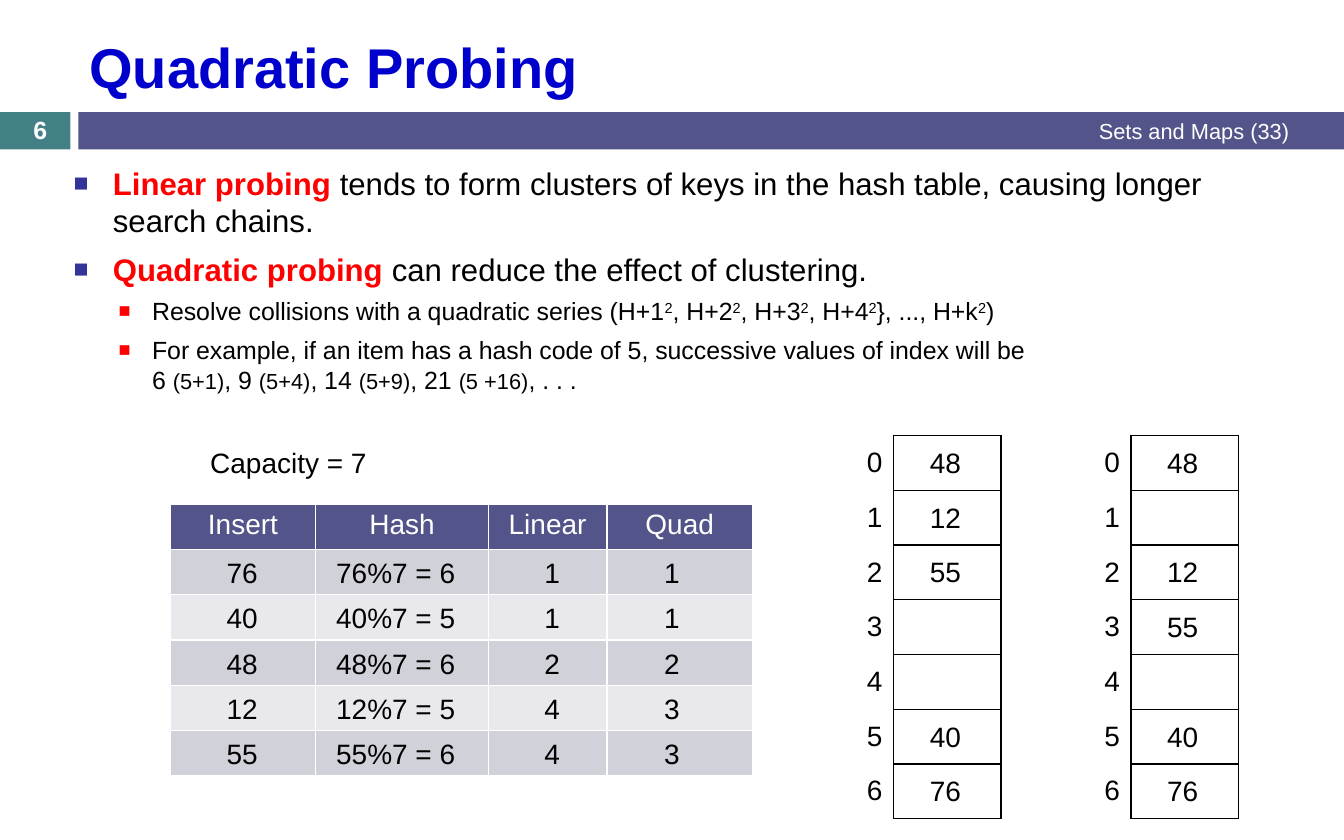
from lxml.etree import SubElement
from pptx import Presentation
from pptx.dml.color import RGBColor
from pptx.enum.shapes import MSO_SHAPE as Shape
from pptx.enum.text import MSO_ANCHOR as Anchor, PP_ALIGN as Align
from pptx.oxml.ns import qn
from pptx.util import Pt

WHITE = RGBColor(0xFF, 0xFF, 0xFF)
BLACK = RGBColor(0, 0, 0)
BLUE = RGBColor(0, 0, 0xCC)
NAVY = RGBColor(0x33, 0x33, 0x99)
RED = RGBColor(0xFF, 0, 0)
TEAL = RGBColor(0x43, 0x80, 0x86)
INDIGO = RGBColor(0x53, 0x54, 0x8A)
DARK = RGBColor(0xD1, 0xD1, 0xDA)
LIGHT = RGBColor(0xE9, 0xE9, 0xED)

POINTS = [
    (0, [("Linear probing ", "key"),
         ("tends to form clusters of keys in the hash table, "
          "causing longer search chains.", "")]),
    (0, [("Quadratic probing ", "key"),
         ("can reduce the effect of clustering.", "")]),
    (1, [("Resolve collisions with a quadratic series (H+1", ""), ("2", "sup"),
         (", H+2", ""), ("2", "sup"), (", H+3", ""), ("2", "sup"),
         (", H+4", ""), ("2", "sup"), ("}, ..., H+k", ""), ("2", "sup"),
         (")", "")]),
    (1, [("For example, if an item has a hash code of 5, "
          "successive values of index will be ", ""), ("\n", "break"),
         ("6 ", ""), ("(5+1)", "small"), (", 9 ", ""), ("(5+4)", "small"),
         (", 14 ", ""), ("(5+9)", "small"), (", 21 ", ""),
         ("(5 +16)", "small"), (", . . .", "")]),
]
# Per level: size, left margin, hanging indent, space before, bullet colour
LEVELS = [(20, 25.2, 25.2, 7, NAVY), (16, 50.4, 21.6, 5.5, RED)]

HEADS = ["Insert", "Hash", "Linear", "Quad"]
WIDTHS = [93.6, 110.9, 76.3, 93.6]
INSERTS = [
    ("76", "76%7 = 6", "1", "1"),
    ("40", "40%7 = 5", "1", "1"),
    ("48", "48%7 = 6", "2", "2"),
    ("12", "12%7 = 5", "4", "3"),
    ("55", "55%7 = 6", "4", "3"),
]
# Left and width of the value boxes in each column, from the table's left
VALUES = [(11, 70.6), (93, 104), (216.7, 57.6), (293.8, 57.6)]
LINEAR = ["48", "12", "55", "", "", "40", "76"]
QUAD = ["48", "", "12", "55", "", "40", "76"]


def style(run, size, color, bold=False):
    font = run.font
    font.name, font.size, font.bold = "Arial", Pt(size), bold
    font.color.rgb = color


def label(slide, box, text, size=18, color=BLACK, bold=False,
          align=Align.CENTER, anchor=Anchor.TOP):
    frame = slide.shapes.add_textbox(*map(Pt, box)).text_frame
    frame.word_wrap = True
    frame.vertical_anchor = anchor
    frame.text = text
    para = frame.paragraphs[0]
    para.alignment = align
    style(para.runs[0], size, color, bold)


def bar(slide, box, color):
    rect = slide.shapes.add_shape(Shape.RECTANGLE, *map(Pt, box))
    rect.shadow.inherit = False
    rect.fill.solid()
    rect.fill.fore_color.rgb = color
    rect.line.fill.background()


def header(slide, left, top, width, height):
    bar(slide, (left, top, 45.2, height), TEAL)
    bar(slide, (left + 50.4, top, width - 50.4, height), INDIGO)
    label(slide, (left + 50.4, top - 58.3, 785.5, 57.6), "Quadratic Probing",
          36, BLUE, True, Align.LEFT, Anchor.MIDDLE)
    label(slide, (left + 324, top - 0.5, 512, 25), "Sets and Maps (33)",
          14, WHITE, align=Align.RIGHT, anchor=Anchor.MIDDLE)
    label(slide, (left, top + 0.7, 51.8, 21.6), "6", 16, WHITE, True,
          anchor=Anchor.MIDDLE)


def bullet(para, margin, hang, color):
    props = para._p.get_or_add_pPr()
    props.set("marL", str(Pt(margin)))
    props.set("indent", str(-Pt(hang)))
    tint = SubElement(props, qn("a:buClr"))
    SubElement(tint, qn("a:srgbClr"), val=str(color))
    SubElement(props, qn("a:buSzPct"), val="80000")
    SubElement(props, qn("a:buFont"), typeface="Arial")
    SubElement(props, qn("a:buChar"), char="■")


def body(slide, *box):
    frame = slide.shapes.add_textbox(*map(Pt, box)).text_frame
    frame.word_wrap = True
    for num, (level, parts) in enumerate(POINTS):
        para = frame.add_paragraph() if num else frame.paragraphs[0]
        size, margin, hang, gap, color = LEVELS[level]
        para.level = level
        para.space_before = Pt(gap)
        bullet(para, margin, hang, color)
        for text, kind in parts:
            if kind == "break":
                para.add_line_break()
                continue
            run = para.add_run()
            run.text = text
            key = kind == "key"
            style(run, 14 if kind == "small" else size,
                  RED if key else BLACK, key)
            if kind == "sup":
                run.font._element.set("baseline", "30000")


def grid(slide, box, rows, widths):
    table = slide.shapes.add_table(rows, len(widths), *map(Pt, box)).table
    for col, width in zip(table.columns, widths):
        col.width = Pt(width)
    for row in table.rows:
        row.height = Pt(box[3] / rows)
    return table


def write(cell, text, color, align):
    cell.text = text
    para = cell.text_frame.paragraphs[0]
    para.alignment = align
    style(para.runs[0], 18, color)


def probes(slide, left, top, width, height):
    """Table of inserted keys, with the values laid over its cells."""
    count = len(INSERTS) + 1
    pitch = height / count
    table = grid(slide, (left, top, width, height), count, WIDTHS)
    for num, row in enumerate(table.rows):
        for cell in row.cells:
            cell.fill.solid()
            cell.fill.fore_color.rgb = (DARK if num % 2 else LIGHT) if num else INDIGO
    for cell, text in zip(table.rows[0].cells, HEADS):
        write(cell, text, WHITE, Align.CENTER)
    for num, row in enumerate(INSERTS, 1):
        for text, (shift, wide) in zip(row, VALUES):
            label(slide, (left + shift, top + num * pitch + 0.3, wide, 29), text)
    label(slide, (left - 2, top - 41, 156, 29), "Capacity = 7")


def border(cell, *sides):
    props = cell._tc.get_or_add_tcPr()
    for num, side in enumerate(sides):
        line = SubElement(props, qn("a:ln" + side), w=str(Pt(1)))
        fill = SubElement(line, qn("a:solidFill"))
        SubElement(fill, qn("a:srgbClr"), val=str(BLACK))
        props.insert(num, line)


def slots(slide, left, top, width, height, keys):
    """Hash table: numbered slots, with the stored keys laid over them."""
    half, pitch = width / 2, height / len(keys)
    table = grid(slide, (left, top, width, height), len(keys), [half, half])
    table.first_row = table.horz_banding = False
    for num, key in enumerate(keys):
        index, slot = table.rows[num].cells
        for cell in (index, slot):
            cell.fill.background()
            cell.vertical_anchor = Anchor.MIDDLE
        write(index, str(num), BLACK, Align.RIGHT)
        border(index, "R")
        border(slot, "L", "R", "T", "B")
        if key:
            label(slide, (left + 67, top + num * pitch + 2.8, 70.6, 29), key)


def main():
    deck = Presentation()
    deck.slide_width, deck.slide_height = Pt(864), Pt(540)
    slide = deck.slides.add_slide(deck.slide_layouts[6])
    header(slide, 0, 72, 864, 24)
    body(slide, 40.3, 102.2, 785.5, 156.2)
    probes(slide, 109.4, 324, 374.4, 175)
    for left, keys in ((505.4, LINEAR), (658, QUAD)):
        slots(slide, left, 280, 138.2, 246.4, keys)
    deck.save("out.pptx")


if __name__ == "__main__":
    main()
